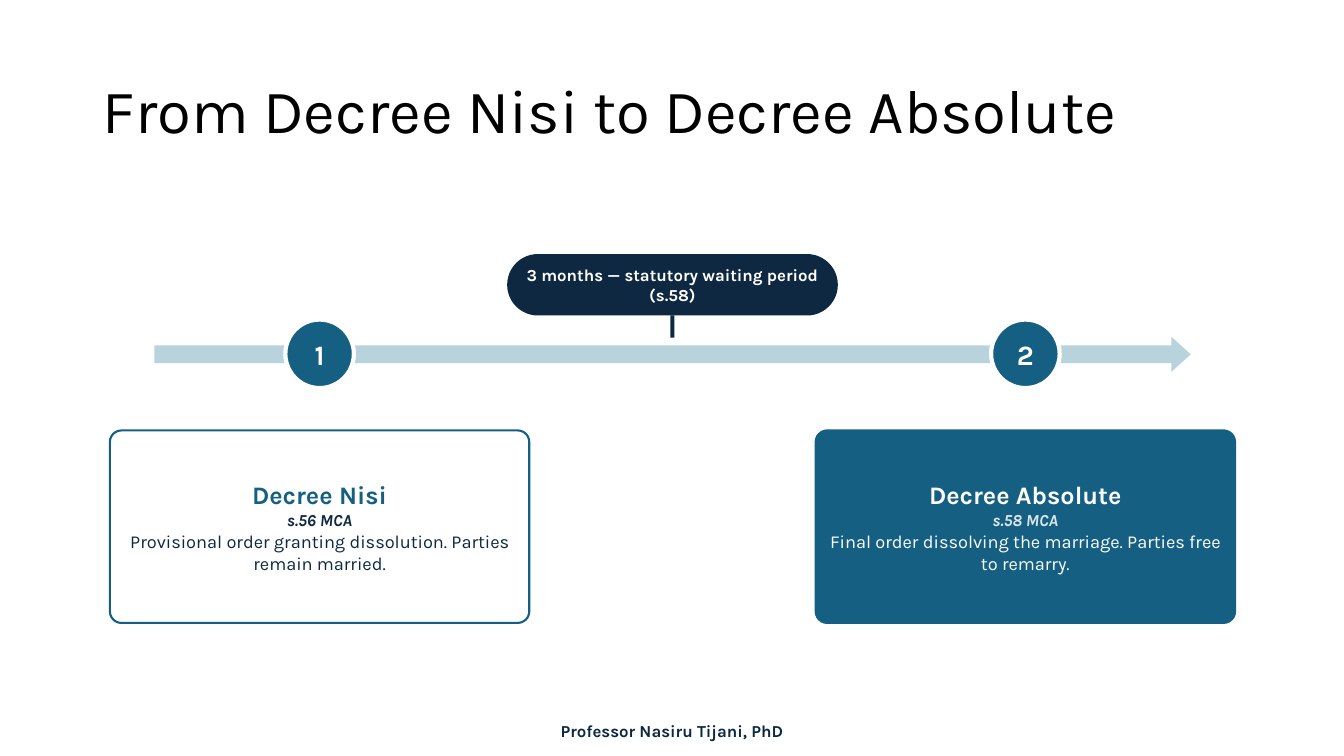
from dataclasses import dataclass

from pptx import Presentation
from pptx.dml.color import RGBColor
from pptx.enum.shapes import MSO_SHAPE as SHAPE
from pptx.enum.text import MSO_ANCHOR as ANCHOR, MSO_AUTO_SIZE as AUTO, PP_ALIGN as ALIGN
from pptx.shapes.autoshape import Shape
from pptx.slide import Slide
from pptx.text.text import TextFrame
from pptx.util import Inches, Pt

FONT = "Karla"
BLACK = RGBColor(0x00, 0x00, 0x00)
WHITE = RGBColor(0xFF, 0xFF, 0xFF)
NAVY = RGBColor(0x0E, 0x28, 0x41)
TEAL = RGBColor(0x15, 0x60, 0x82)
PALE_TEAL = RGBColor(0xB9, 0xD3, 0xDC)
MIST = RGBColor(0xDC, 0xE6, 0xEB)

SLIDE_W, SLIDE_H = 13.33, 7.5
STAGE_X, STAGE_STEP = 3.17, 7.0
BADGE = 0.68
CARD_W, CARD_H = 4.16, 1.91


@dataclass
class Line:
    text: str
    size: float
    color: RGBColor
    bold: bool = True
    italic: bool = False


@dataclass
class Stage:
    fill: RGBColor
    lines: list[Line]


STAGES = [
    Stage(WHITE, [
        Line("Decree Nisi", 18, TEAL),
        Line("s.56 MCA", 12, NAVY, italic=True),
        Line("Provisional order granting dissolution. Parties remain married.", 13, NAVY, bold=False),
    ]),
    Stage(TEAL, [
        Line("Decree Absolute", 18, WHITE),
        Line("s.58 MCA", 12, MIST, italic=True),
        Line("Final order dissolving the marriage. Parties free to remarry.", 13, WHITE, bold=False),
    ]),
]


def write(tf: TextFrame, lines: list[Line], align: ALIGN = ALIGN.CENTER) -> None:
    tf.word_wrap = True
    tf.auto_size = AUTO.NONE
    tf.vertical_anchor = ANCHOR.MIDDLE
    for i, line in enumerate(lines):
        p = tf.add_paragraph() if i else tf.paragraphs[0]
        p.alignment = align
        r = p.add_run()
        r.text = line.text
        r.font.name = FONT
        r.font.size = Pt(line.size)
        r.font.bold = line.bold
        r.font.italic = line.italic
        r.font.color.rgb = line.color


def add_block(s: Slide, kind: SHAPE, x: float, y: float, w: float, h: float, fill: RGBColor,
              border: RGBColor | None = None, border_pt: float = 0) -> Shape:
    sp = s.shapes.add_shape(kind, Inches(x), Inches(y), Inches(w), Inches(h))
    sp.shadow.inherit = False
    sp.fill.solid()
    sp.fill.fore_color.rgb = fill
    if border is None:
        sp.line.fill.background()
    else:
        sp.line.color.rgb = border
        sp.line.width = Pt(border_pt)
    return sp


def add_badge(s: Slide, number: int, x: float) -> None:
    sp = add_block(s, SHAPE.OVAL, x - BADGE / 2, 3.17, BADGE, BADGE, TEAL, WHITE, 3)
    write(sp.text_frame, [Line(str(number), 20, WHITE)])


def add_card(s: Slide, stage: Stage, x: float) -> None:
    sp = add_block(s, SHAPE.ROUNDED_RECTANGLE, x - CARD_W / 2, 4.27, CARD_W, CARD_H,
                   stage.fill, TEAL, 1.5)
    sp.adjustments[0] = 0.06
    write(sp.text_frame, stage.lines)


def main() -> None:
    prs = Presentation()
    prs.slide_width, prs.slide_height = Inches(SLIDE_W), Inches(SLIDE_H)
    s = prs.slides.add_slide(prs.slide_layouts[5])

    # Title
    title = s.shapes.title
    title.left, title.top = Inches(0.92), Inches(0.4)
    title.width, title.height = Inches(11.5), Inches(1.45)
    write(title.text_frame, [Line("From Decree Nisi to Decree Absolute", 44, BLACK, bold=False)],
          ALIGN.LEFT)
    title.text_frame.paragraphs[0].line_spacing = 0.9

    # Timeline arrow
    arrow = add_block(s, SHAPE.RIGHT_ARROW, 1.53, 3.34, 10.28, 0.35, PALE_TEAL)
    arrow.adjustments[0] = 0.5
    arrow.adjustments[1] = 0.55

    # Waiting period marker
    add_block(s, SHAPE.RECTANGLE, 6.65, 3.13, 0.04, 0.22, NAVY)
    pill = add_block(s, SHAPE.ROUNDED_RECTANGLE, 5.03, 2.52, 3.28, 0.61, NAVY)
    pill.adjustments[0] = 0.5
    write(pill.text_frame, [Line("3 months — statutory waiting period (s.58)", 12, WHITE)])

    # Numbered stages with their cards
    for i, stage in enumerate(STAGES):
        x = STAGE_X + i * STAGE_STEP
        add_badge(s, i + 1, x)
        add_card(s, stage, x)

    # Footer
    footer = s.shapes.add_textbox(Inches(0), Inches(7.09), Inches(SLIDE_W), Inches(0.33))
    write(footer.text_frame, [Line("Professor Nasiru Tijani, PhD", 12, NAVY)])

    prs.save("out.pptx")


if __name__ == "__main__":
    main()
